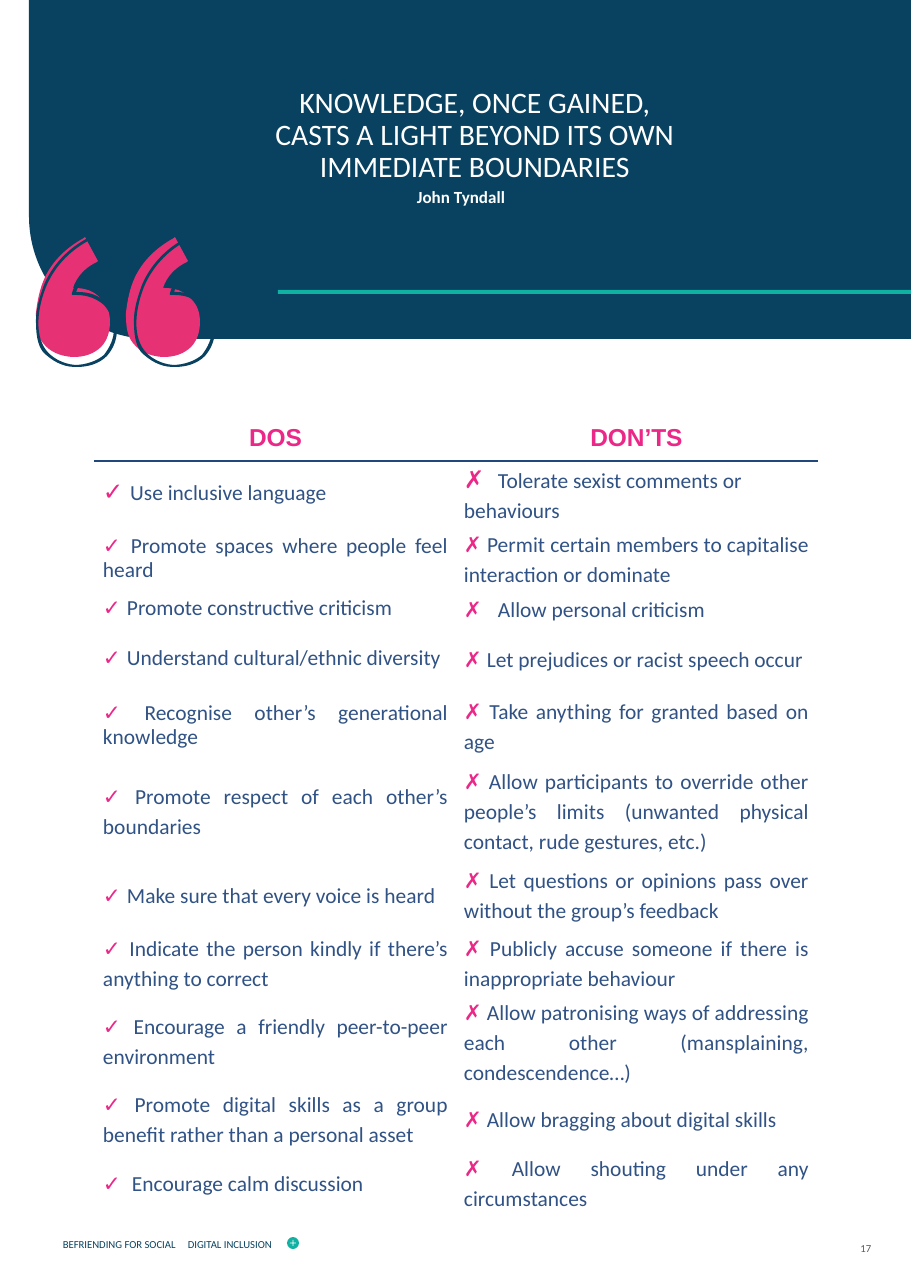
from lxml.etree import SubElement
from pptx import Presentation
from pptx.dml.color import RGBColor
from pptx.enum.shapes import MSO_SHAPE as Shape
from pptx.enum.text import MSO_ANCHOR as Anchor, PP_ALIGN as Align
from pptx.oxml.ns import qn
from pptx.util import Pt

NAVY = RGBColor(0x08, 0x42, 0x60)
TEAL = RGBColor(0x10, 0xB1, 0xA2)
PINK = RGBColor(0xE6, 0x32, 0x75)
MAGENTA = RGBColor(0xEB, 0x27, 0x88)
BLUE = RGBColor(0x30, 0x52, 0x84)
RULE = RGBColor(0x1F, 0x49, 0x7D)
GREY = RGBColor(0x59, 0x59, 0x59)
WHITE = RGBColor(0xFF, 0xFF, 0xFF)

QUOTE = "KNOWLEDGE, ONCE GAINED, CASTS A LIGHT BEYOND ITS OWN IMMEDIATE BOUNDARIES"
AUTHOR = "John Tyndall"
FOOTER = "BEFRIENDING FOR SOCIAL\tDIGITAL INCLUSION"
PAGE = "17"
HEADINGS = ("DOS", "DON’TS")
MARKS = ("✓ ", "✗")
TABS = (29, 34)
ADVICE = [
    (64, "Use inclusive language", "\tTolerate sexist comments or behaviours"),
    (67, "Promote spaces where people feel heard",
     " Permit certain members to capitalise interaction or dominate"),
    (33, "Promote constructive criticism", "\tAllow personal criticism"),
    (67, "Understand cultural/ethnic diversity", " Let prejudices or racist speech occur"),
    (67, "Recognise other’s generational knowledge", " Take anything for granted based on age"),
    (102, "Promote respect of each other’s boundaries",
     " Allow participants to override other people’s limits "
     "(unwanted physical contact, rude gestures, etc.)"),
    (67, "Make sure that every voice is heard",
     " Let questions or opinions pass over without the group’s feedback"),
    (68, "Indicate the person kindly if there’s anything to correct",
     " Publicly accuse someone if there is inappropriate behaviour"),
    (67, "Encourage a friendly peer-to-peer environment",
     " Allow patronising ways of addressing each other (mansplaining, condescendence…)"),
    (68, "Promote digital skills as a group benefit rather than a personal asset",
     " Allow bragging about digital skills"),
    (42, "\tEncourage calm discussion", " Allow shouting under any circumstances"),
]
HEADING_HEIGHT, COLUMN_WIDTH = 43, 361
TIGHT_ROWS = 5

BANNER = [[(911, 339), (152, 339), (84, 339, 29, 284, 29, 216), (29, 0), (911, 0)]]
SOLID_MARK = [[
    (74, 357), (72, 357), (60, 356, 50, 352, 43, 343), (37, 336, 36, 326, 36, 313),
    (37, 304, 39, 292, 43, 282), (50, 264, 64, 249, 84, 238), (85, 237), (98, 261), (97, 262),
    (86, 267, 77, 276, 73, 288), (74, 288), (85, 288, 94, 291, 100, 298),
    (107, 304, 110, 312, 110, 322), (110, 332, 107, 341, 101, 347), (94, 354, 84, 357, 74, 357),
]]
OUTLINE_MARK = [[
    (77, 367), (75, 367), (62, 367, 51, 360, 43, 352), (37, 344, 36, 333, 36, 320),
    (36, 309, 40, 296, 44, 285), (52, 266, 67, 249, 88, 238), (90, 237), (105, 263), (102, 263),
    (90, 269, 82, 278, 76, 292), (77, 292), (89, 292, 99, 295, 106, 303),
    (114, 310, 117, 318, 117, 329), (117, 339, 114, 348, 107, 356), (99, 364, 88, 367, 77, 367),
], [
    (46, 350), (52, 358, 63, 364, 75, 365), (86, 365, 97, 361, 104, 355),
    (110, 347, 114, 339, 114, 329), (114, 320, 110, 312, 104, 305), (97, 299, 88, 295, 76, 295),
    (72, 295), (72, 293), (77, 278, 87, 268, 99, 262), (88, 241), (68, 252, 54, 268, 46, 287),
    (38, 307, 34, 334, 46, 350),
]]
PX = 914400 / 110.2


def px(length):
    return round(length * PX)


def add_text(paragraph, text, size=14, color=BLUE, font="Calibri", bold=False,
             align=None, spacing=None, tab=None):
    if tab and "\t" in text:
        stops = SubElement(paragraph._p.get_or_add_pPr(), qn("a:tabLst"))
        SubElement(stops, qn("a:tab"), pos=str(px(tab)), algn="l")
    if align is not None:
        paragraph.alignment = align
    if spacing:
        paragraph.line_spacing = spacing
    run = paragraph.add_run()
    run.text = text
    run.font.name, run.font.size, run.font.bold = font, Pt(size), bold
    run.font.color.rgb = color


def add_frame(left, top, width, height):
    frame = slide.shapes.add_textbox(px(left), px(top), px(width), px(height)).text_frame
    frame.word_wrap = True
    frame.vertical_anchor = Anchor.MIDDLE
    return frame


def paint(shape, color):
    shape.shadow.inherit = False
    shape.fill.solid()
    shape.fill.fore_color.rgb = color
    shape.line.fill.background()


def add_outline(contours, color, shifts=(0,)):
    loops = [[[(px(x + shift), px(y)) for x, y in zip(step[::2], step[1::2])]
              for step in contour] for shift in shifts for contour in contours]
    builder = slide.shapes.build_freeform(*loops[0][0][-1])
    for loop in loops:
        if loop is not loops[0]:
            builder.move_to(*loop[0][-1])
        builder.add_line_segments([step[-1] for step in loop[1:]], close=True)
    shape = builder.convert_to_shape()
    segments = list(shape._element.iter(qn("a:lnTo")))
    for segment, step in zip(segments, [step for loop in loops for step in loop[1:]]):
        if len(step) == 3:
            curve = SubElement(segment.getparent(), qn("a:cubicBezTo"))
            for x, y in step:
                SubElement(curve, qn("a:pt"), x=str(x - shape.left), y=str(y - shape.top))
            segment.getparent().replace(segment, curve)
    paint(shape, color)


def add_preset(kind, color, left, top, width, height):
    shape = slide.shapes.add_shape(kind, px(left), px(top), px(width), px(height))
    paint(shape, color)
    return shape


def style_cell(cell, top, bottom):
    cell.margin_left = cell.margin_right = px(8)
    cell.margin_top = cell.margin_bottom = 0
    cell.vertical_anchor = Anchor.MIDDLE
    properties = cell._tc.get_or_add_tcPr()
    for side, color in (("L", WHITE), ("R", WHITE), ("T", top), ("B", bottom)):
        border = SubElement(properties, qn(f"a:ln{side}"), w=str(Pt(1)))
        SubElement(SubElement(border, qn("a:solidFill")), qn("a:srgbClr"), val=str(color))
    cell.fill.background()


deck = Presentation()
deck.slide_width, deck.slide_height = px(911), px(1288)
slide = deck.slides.add_slide(deck.slide_layouts[6])

footer = add_frame(52, 1222, 444, 44)
add_text(footer.paragraphs[0], FOOTER, size=7, color=NAVY, tab=125)
add_preset(Shape.OVAL, TEAL, 287, 1237, 12, 12)
plus = add_preset(Shape.CROSS, WHITE, 290, 1240, 6, 6)
plus.adjustments[0] = 0.43

add_outline(BANNER, NAVY)
add_preset(Shape.RECTANGLE, TEAL, 278, 290, 633, 4)

quote = add_frame(229, 63, 464, 169)
add_text(quote.paragraphs[0], QUOTE, size=19.4, color=WHITE, align=Align.CENTER, spacing=0.9)
quote.paragraphs[0]._p.get_or_add_pPr().set("marL", str(px(28)))
add_text(quote.add_paragraph(), AUTHOR, size=11.1, color=WHITE, bold=True,
         align=Align.CENTER, spacing=1.1)

page = add_frame(831, 1220, 51, 56)
add_text(page.paragraphs[0], PAGE, size=7, color=GREY, align=Align.RIGHT)

add_outline(SOLID_MARK, PINK, shifts=(0, 90))
add_outline(OUTLINE_MARK, NAVY, shifts=(0, 98))

heights = [HEADING_HEIGHT] + [row[0] for row in ADVICE]
table = slide.shapes.add_table(len(heights), 2, px(95), px(418),
                               px(2 * COLUMN_WIDTH), px(sum(heights))).table
table.first_row = table.horz_banding = False
for row, height in zip(table.rows, heights):
    row.height = px(height)
for column, heading in enumerate(HEADINGS):
    table.columns[column].width = px(COLUMN_WIDTH)
    cell = table.cell(0, column)
    style_cell(cell, WHITE, RULE)
    add_text(cell.text_frame.paragraphs[0], heading, size=16, color=MAGENTA, font="Arial",
             bold=True, align=Align.CENTER, spacing=0.9)
    for number, advice in enumerate(ADVICE, 1):
        cell = table.cell(number, column)
        style_cell(cell, RULE if number == 1 else WHITE, WHITE)
        line = cell.text_frame.paragraphs[0]
        first_dont = number == 1 and column == 1
        add_text(line, MARKS[column], size=16 if number == 1 else 14, color=MAGENTA,
                 font="Arial", bold=True, align=Align.LEFT if first_dont else Align.JUSTIFY,
                 spacing=0.9 if column == 0 and number <= TIGHT_ROWS else 1.15)
        add_text(line, advice[column + 1], tab=TABS[column])

deck.save("out.pptx")
